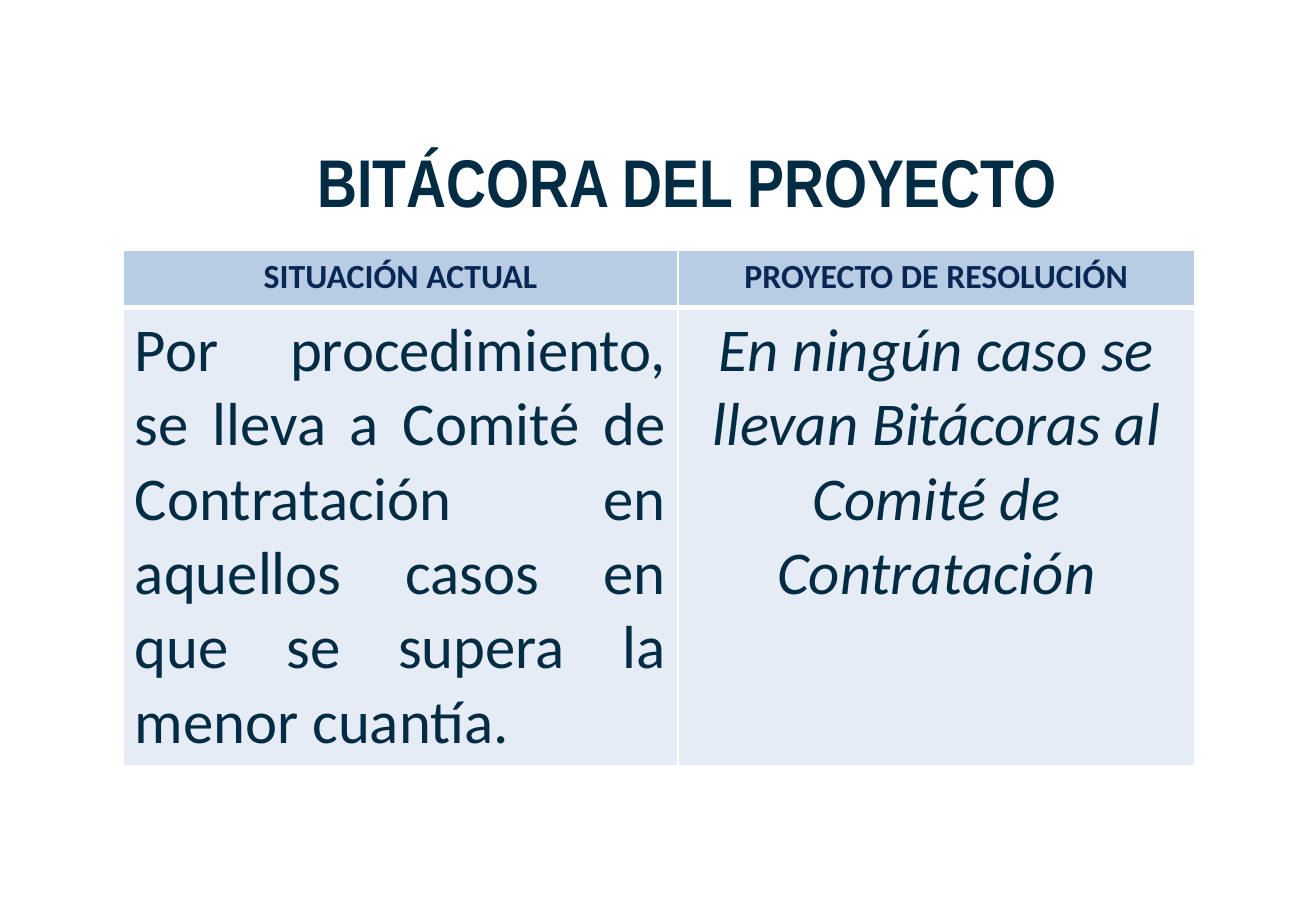
from lxml import etree
from pptx import Presentation, util as u
from pptx.dml.color import RGBColor
from pptx.enum import text
from pptx.oxml import ns

INK = {"title": "022B44", "head": "082754", "body": "022B44",
       "band": "B8CCE4", "cell": "E6ECF5", "rule": "FFFFFF"}
ALIGN = {"c": text.PP_ALIGN.CENTER, "j": text.PP_ALIGN.JUSTIFY}


class Deck:
    def __init__(self, wide, high):
        self.prs = Presentation()
        self.prs.slide_width = u.Inches(wide)
        self.prs.slide_height = u.Inches(high)
        self.slide = self.prs.slides.add_slide(self.prs.slide_layouts[5])

    def across(self, share):
        return round(self.prs.slide_width * share / 100)

    def down(self, share):
        return round(self.prs.slide_height * share / 100)

    def label(self, frame, words, size, face, ink, align="c", bold=False, slant=False):
        frame.text = words
        par = frame.paragraphs[0]
        par.alignment = ALIGN[align]
        font = par.font
        font.name, font.size = face, u.Pt(size)
        font.bold, font.italic = bold, slant
        font.color.rgb = RGBColor.from_string(INK[ink])

    def title(self, words, left, top, wide, high):
        box = self.slide.shapes.title
        box.left, box.top = self.across(left), self.down(top)
        box.width, box.height = self.across(wide), self.down(high)
        box.text_frame.vertical_anchor = text.MSO_ANCHOR.MIDDLE
        self.label(box.text_frame, words, 40, "Arial Narrow", "title", bold=True)

    def edge(self, cell, base):
        props = cell._tc.get_or_add_tcPr()
        for spot, side in enumerate("LRTB"):
            line = etree.Element(ns.qn(f"a:ln{side}"))
            line.set("w", str(u.Pt(base[side])))
            fill = etree.SubElement(line, ns.qn("a:solidFill"))
            etree.SubElement(fill, ns.qn("a:srgbClr")).set("val", INK["rule"])
            props.insert(spot, line)

    def table(self, left, top, cols, rows, cells):
        grid = self.slide.shapes.add_table(
            len(rows), len(cols), self.across(left), self.down(top),
            self.across(sum(cols)), self.down(sum(rows))).table
        for col, wide in zip(grid.columns, cols):
            col.width = self.across(wide)
        for row, high in zip(grid.rows, rows):
            row.height = self.down(high)
        for r, line in enumerate(cells):
            for c, (words, look) in enumerate(line):
                cell = grid.cell(r, c)
                cell.fill.solid()
                cell.fill.fore_color.rgb = RGBColor.from_string(INK["cell" if r else "band"])
                self.edge(cell, {"L": 1, "R": 1, "T": 3 if r == 1 else 1, "B": 1 if r else 3})
                self.label(cell.text_frame, words, face="Calibri", **look)


def main():
    deck = Deck(10.83, 7.5)
    deck.title("BITÁCORA DEL PROYECTO", 9.7, 9.07, 85.04, 21.47)
    head = {"size": 20, "ink": "head", "bold": True}
    body = {"size": 36, "ink": "body"}
    deck.table(9.33, 27.47, [42.2, 39.24], [6.3, 49.6], [
        [("SITUACIÓN ACTUAL", head), ("PROYECTO DE RESOLUCIÓN", head)],
        [("Por procedimiento, se lleva a Comité de Contratación en aquellos "
          "casos en que se supera la menor cuantía.", {**body, "align": "j"}),
         ("En ningún caso se llevan Bitácoras al Comité de Contratación",
          {**body, "slant": True})],
    ])
    deck.prs.save("out.pptx")


if __name__ == "__main__":
    main()
